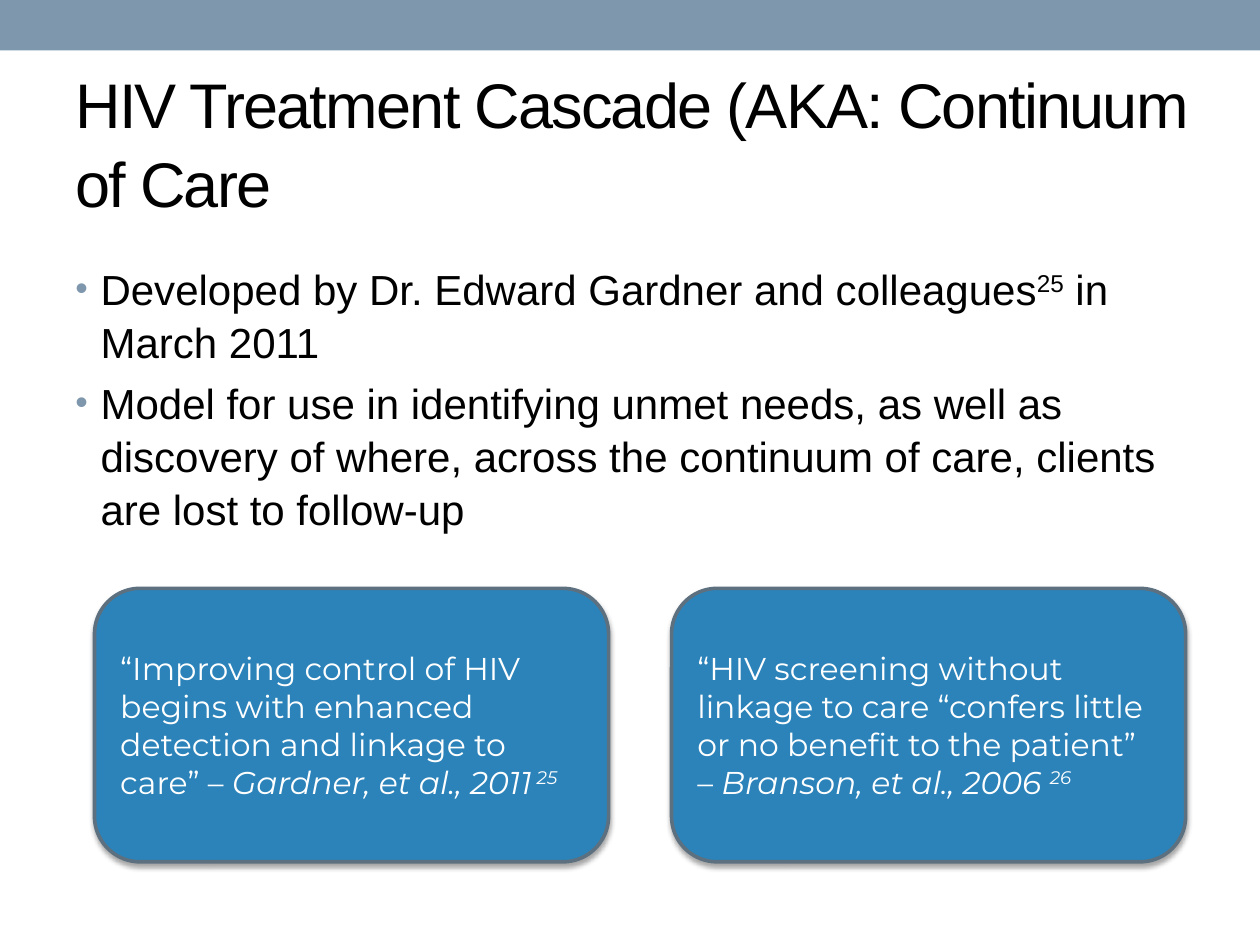
from dataclasses import dataclass

from lxml import etree
from pptx import Presentation
from pptx.dml.color import RGBColor
from pptx.enum.shapes import MSO_SHAPE
from pptx.enum.text import MSO_ANCHOR, PP_ALIGN
from pptx.oxml.ns import qn
from pptx.util import Inches, Pt

RECTANGLE = MSO_SHAPE.RECTANGLE
ROUNDED_RECTANGLE = MSO_SHAPE.ROUNDED_RECTANGLE
TOP = MSO_ANCHOR.TOP
MIDDLE = MSO_ANCHOR.MIDDLE
LEFT = PP_ALIGN.LEFT
SUPERSCRIPT = "30000"


@dataclass(frozen=True)
class Theme:
    accent: str = "7E97AD"
    card: str = "2B83BA"
    card_line: str = "5D7080"
    dark: str = "000000"
    light: str = "FFFFFF"
    main_font: str = "Arial"
    card_font: str = "Montserrat"
    title_size: int = 36
    body_size: int = 24
    card_size: int = 18
    line_spacing: float = 1.05


def add_element(parent, tag, **attributes):
    return etree.SubElement(parent, qn(tag), attributes)


class SlideBuilder:
    def __init__(self, slide, theme):
        self.slide = slide
        self.theme = theme

    def add_runs(self, paragraph, runs, font, size, color, spacing=None):
        """Fill a paragraph from (text, style) pairs; style may name italic and super."""
        paragraph.alignment = LEFT
        for text, style in runs:
            run = paragraph.add_run()
            run.text = text
            values = {"name": font, "size": Pt(size), "italic": "italic" in style}
            for name, value in values.items():
                setattr(run.font, name, value)
            run.font.color.rgb = RGBColor.from_string(color)
            properties = run._r.get_or_add_rPr()
            if "super" in style:
                properties.set("baseline", SUPERSCRIPT)
            if spacing is not None:
                properties.set("spc", str(spacing))

    def text_frame(self, box, anchor):
        shape = self.slide.shapes.add_textbox(*map(Inches, box))
        frame = shape.text_frame
        frame.word_wrap = True
        frame.vertical_anchor = anchor
        return frame

    def band(self, box):
        shape = self.slide.shapes.add_shape(RECTANGLE, *map(Inches, box))
        shape.shadow.inherit = False
        shape.fill.solid()
        shape.fill.fore_color.rgb = RGBColor.from_string(self.theme.accent)
        shape.line.fill.background()

    def title(self, box, text):
        theme = self.theme
        paragraph = self.text_frame(box, MIDDLE).paragraphs[0]
        paragraph.line_spacing = theme.line_spacing
        self.add_runs(paragraph, [(text, "")], theme.main_font, theme.title_size,
                      theme.dark, spacing=-100)

    def bullets(self, box, items):
        theme = self.theme
        frame = self.text_frame(box, TOP)
        frame.margin_top = Inches(0.32)
        for index, runs in enumerate(items):
            paragraph = frame.add_paragraph() if index else frame.paragraphs[0]
            paragraph.line_spacing = theme.line_spacing
            paragraph.space_before = Pt(0.2 * theme.body_size)
            self.add_runs(paragraph, runs, theme.main_font, theme.body_size, theme.dark)
            properties = paragraph._p.get_or_add_pPr()
            properties.set("marL", str(Inches(0.2)))
            properties.set("indent", str(Inches(-0.2)))
            bullet_color = add_element(properties, "a:buClr")
            add_element(bullet_color, "a:srgbClr", val=theme.accent)
            add_element(properties, "a:buSzPct", val="85000")
            add_element(properties, "a:buFont", typeface=theme.main_font)
            add_element(properties, "a:buChar", char="•")

    def quote_card(self, box, runs):
        theme = self.theme
        shape = self.slide.shapes.add_shape(ROUNDED_RECTANGLE, *map(Inches, box))
        shape.fill.solid()
        shape.fill.fore_color.rgb = RGBColor.from_string(theme.card)
        shape.line.color.rgb = RGBColor.from_string(theme.card_line)
        shape.line.width = Pt(2.08)
        self.soft_shadow(shape)
        frame = shape.text_frame
        frame.word_wrap = True
        frame.vertical_anchor = MIDDLE
        self.add_runs(frame.paragraphs[0], runs, theme.card_font, theme.card_size, theme.light)

    def soft_shadow(self, shape):
        shape.shadow.inherit = False
        effects = shape._element.spPr.find(qn("a:effectLst"))
        shadow = add_element(effects, "a:outerShdw", blurRad=str(Pt(3.1)), dist=str(Pt(1.8)),
                             dir="5400000", rotWithShape="0")
        color = add_element(shadow, "a:srgbClr", val=self.theme.dark)
        add_element(color, "a:alpha", val="35000")


BULLETS = [
    [("Developed by Dr. Edward Gardner and colleagues", ""), ("25", "super"),
     (" in March 2011", "")],
    [("Model for use in identifying unmet needs, as well as discovery of where, "
      "across the continuum of care, clients are lost to follow-up", "")],
]
QUOTES = [
    [("“Improving control of HIV begins with enhanced detection and linkage to care” – ", ""),
     ("Gardner, et al., 2011", "italic"), (" 25", "italic super")],
    [("“HIV screening without linkage to care “confers little or no benefit "
      "to the patient” – ", ""),
     ("Branson, et al., 2006 ", "italic"), ("26", "italic super")],
]
CARD_LEFT, CARD_TOP, CARD_WIDTH, CARD_HEIGHT, CARD_GAP = 0.75, 4.67, 4.08, 2.17, 0.5


def main():
    presentation = Presentation()
    presentation.slide_width = Inches(10)
    presentation.slide_height = Inches(7.5)
    slide = presentation.slides.add_slide(presentation.slide_layouts[6])
    builder = SlideBuilder(slide, Theme())
    builder.band((0, 0, 10, 0.4))
    builder.title((0.5, 0.58, 9.35, 1.08), "HIV Treatment Cascade (AKA: Continuum of Care")
    builder.bullets((0.5, 1.75, 9, 5.33), BULLETS)
    for index, runs in enumerate(QUOTES):
        left = CARD_LEFT + index * (CARD_WIDTH + CARD_GAP)
        builder.quote_card((left, CARD_TOP, CARD_WIDTH, CARD_HEIGHT), runs)
    presentation.save("out.pptx")


if __name__ == "__main__":
    main()
